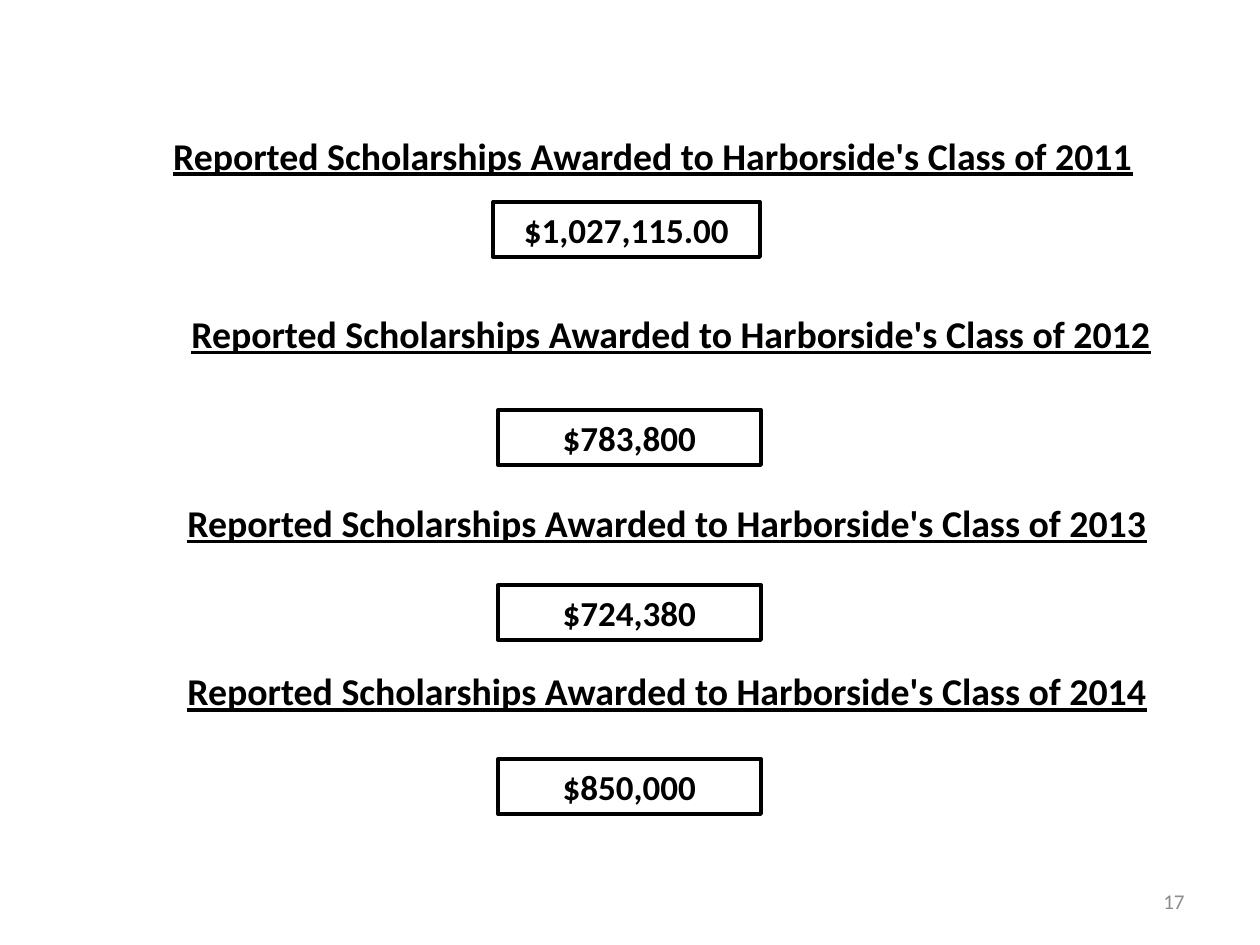
from pptx import Presentation
from pptx.dml.color import RGBColor
from pptx.enum.shapes import MSO_SHAPE
from pptx.enum.text import MSO_ANCHOR, PP_ALIGN
from pptx.util import Emu, Pt

PX = 914400 // 126
BLACK = RGBColor(0x00, 0x00, 0x00)
GREY = RGBColor(0x8C, 0x8C, 0x8C)
RECTANGLE = MSO_SHAPE.RECTANGLE
TOP, MIDDLE = MSO_ANCHOR.TOP, MSO_ANCHOR.MIDDLE
LEFT, CENTER, RIGHT = PP_ALIGN.LEFT, PP_ALIGN.CENTER, PP_ALIGN.RIGHT

HEADING_FONT = {"name": "Calibri", "size": Pt(21.6), "bold": True, "underline": True}
AMOUNT_FONT = {"name": "Calibri", "size": Pt(20), "bold": True}
NUMBER_FONT = {"name": "Calibri", "size": Pt(12)}

# class year, amount, heading box, heading alignment, amount box (px)
AWARDS = [
    (2011, "$1,027,115.00", (102, 126, 1102, 58), CENTER, (493, 202, 267, 55)),
    (2012, "$783,800", (179, 305, 998, 58), LEFT, (498, 410, 263, 55)),
    (2013, "$724,380", (175, 494, 1000, 97), LEFT, (498, 585, 263, 55)),
    (2014, "$850,000", (175, 662, 1000, 97), LEFT, (498, 759, 263, 55)),
]
NUMBER_BOX = (903, 876, 294, 50)


def to_emu(box):
    return [Emu(length * PX) for length in box]


def write(shape, text, font, color, align, anchor):
    frame = shape.text_frame
    frame.word_wrap = True
    frame.vertical_anchor = anchor
    para = frame.paragraphs[0]
    para.alignment = align
    span = para.add_run()
    span.text = text
    for name, value in font.items():
        setattr(span.font, name, value)
    span.font.color.rgb = color


def add_text(page, box, text, font, color, align, anchor=TOP):
    write(page.shapes.add_textbox(*to_emu(box)), text, font, color, align, anchor)


def add_amount(page, box, amount):
    frame = page.shapes.add_shape(RECTANGLE, *to_emu(box))
    frame.shadow.inherit = False
    frame.fill.background()
    frame.line.color.rgb = BLACK
    frame.line.width = Pt(2.25)
    write(frame, amount, AMOUNT_FONT, BLACK, CENTER, TOP)


def add_award(page, year, amount, heading_box, align, amount_box):
    heading = f"Reported Scholarships Awarded to Harborside's Class of {year}"
    add_text(page, heading_box, heading, HEADING_FONT, BLACK, align)
    add_amount(page, amount_box, amount)


def main():
    deck = Presentation()
    deck.slide_width, deck.slide_height = to_emu((1260, 945))
    page = deck.slides.add_slide(deck.slide_layouts[6])
    for award in AWARDS:
        add_award(page, *award)
    add_text(page, NUMBER_BOX, "17", NUMBER_FONT, GREY, RIGHT, MIDDLE)
    deck.save("out.pptx")


if __name__ == "__main__":
    main()
